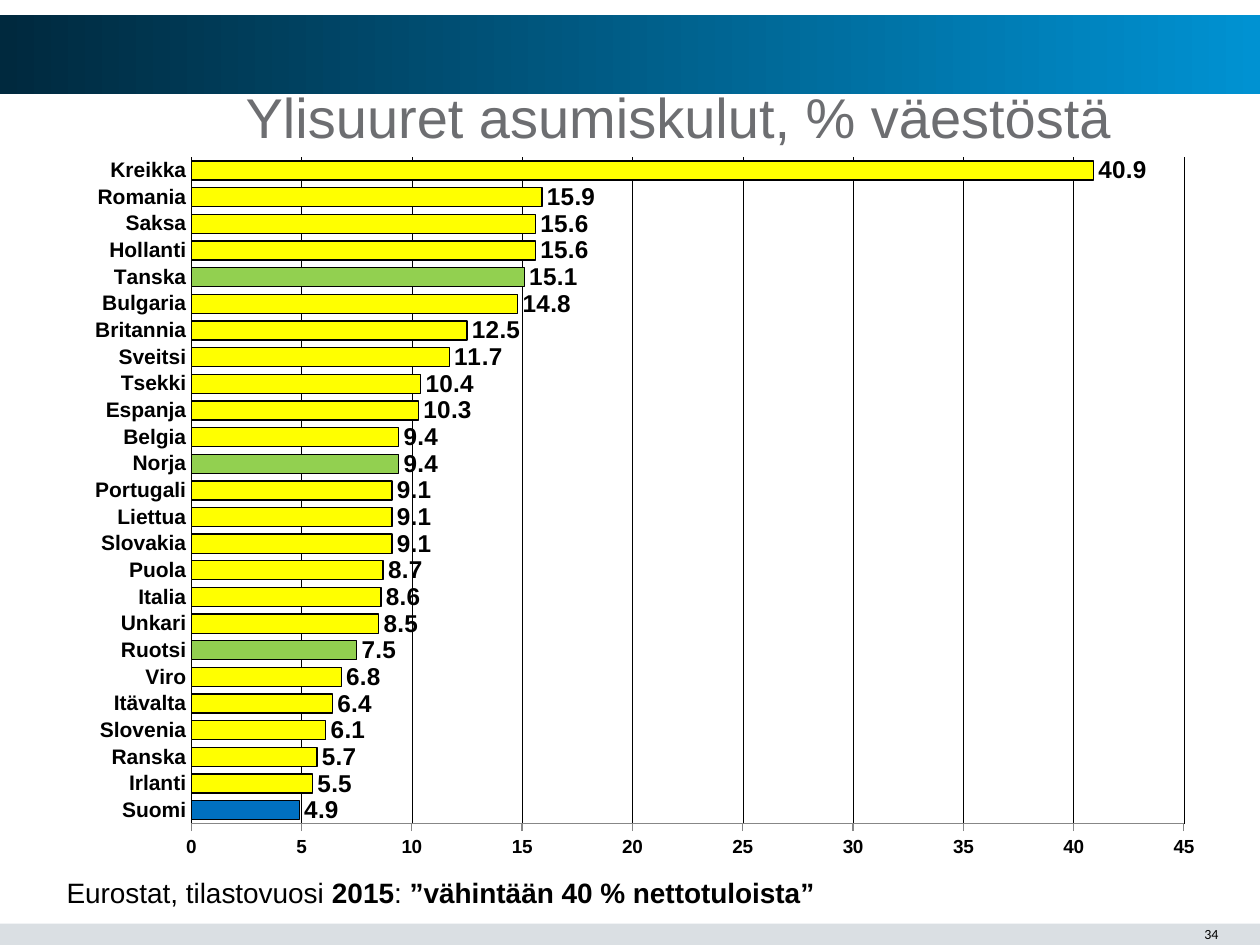
from dataclasses import dataclass

from lxml import etree
from pptx import Presentation
from pptx.chart.data import CategoryChartData
from pptx.dml.color import RGBColor
from pptx.enum.chart import XL_CHART_TYPE, XL_LABEL_POSITION, XL_TICK_MARK
from pptx.enum.shapes import MSO_SHAPE
from pptx.enum.text import MSO_ANCHOR, PP_ALIGN
from pptx.oxml import parse_xml
from pptx.oxml.ns import nsdecls, qn
from pptx.util import Inches, Pt

BAR, RECTANGLE = XL_CHART_TYPE.BAR_CLUSTERED, MSO_SHAPE.RECTANGLE
OUTSIDE_END = XL_LABEL_POSITION.OUTSIDE_END
NO_TICK, TICK_OUT = XL_TICK_MARK.NONE, XL_TICK_MARK.OUTSIDE
MIDDLE, BOTTOM, RIGHT = MSO_ANCHOR.MIDDLE, MSO_ANCHOR.BOTTOM, PP_ALIGN.RIGHT


@dataclass(frozen=True)
class Theme:
    font: str = "Arial"
    number_font: str = "Calibri"
    black: RGBColor = RGBColor(0x00, 0x00, 0x00)
    title: RGBColor = RGBColor(0x6D, 0x6E, 0x71)
    banner_dark: RGBColor = RGBColor(0x00, 0x29, 0x3E)
    banner_light: RGBColor = RGBColor(0x00, 0x92, 0xD2)
    footer: RGBColor = RGBColor(0xDA, 0xDF, 0xE3)
    axis: RGBColor = RGBColor(0x87, 0x87, 0x87)
    europe: RGBColor = RGBColor(0xFF, 0xFF, 0x00)
    nordic: RGBColor = RGBColor(0x92, 0xD0, 0x50)
    finland: RGBColor = RGBColor(0x00, 0x70, 0xC0)
    title_size: Pt = Pt(32)
    source_size: Pt = Pt(16)
    value_size: Pt = Pt(13.9)
    country_size: Pt = Pt(12)
    scale_size: Pt = Pt(10.8)
    number_size: Pt = Pt(8)


THEME = Theme()

COST_SHARES = {
    "Suomi": 4.9, "Irlanti": 5.5, "Ranska": 5.7, "Slovenia": 6.1,
    "Itävalta": 6.4, "Viro": 6.8, "Ruotsi": 7.5, "Unkari": 8.5,
    "Italia": 8.6, "Puola": 8.7, "Slovakia": 9.1, "Liettua": 9.1,
    "Portugali": 9.1, "Norja": 9.4, "Belgia": 9.4, "Espanja": 10.3,
    "Tsekki": 10.4, "Sveitsi": 11.7, "Britannia": 12.5, "Bulgaria": 14.8,
    "Tanska": 15.1, "Hollanti": 15.6, "Saksa": 15.6, "Romania": 15.9,
    "Kreikka": 40.9,
}
HIGHLIGHTS = {
    "Suomi": THEME.finland,
    "Ruotsi": THEME.nordic,
    "Norja": THEME.nordic,
    "Tanska": THEME.nordic,
}


def style_font(font, size, color=THEME.black, bold=False, name=THEME.font):
    font.name, font.size, font.bold = name, size, bold
    font.color.rgb = color


def style_line(line, color, width):
    line.color.rgb = color
    line.width = Pt(width)


prs = Presentation()
prs.slide_width, prs.slide_height = Inches(10), Inches(7.5)
slide = prs.slides.add_slide(prs.slide_layouts[5])
shapes = slide.shapes

# Banner and footer bands
banner = shapes.add_shape(RECTANGLE, 0, Inches(0.12), Inches(10), Inches(0.63))
banner.fill.gradient()
banner.fill.gradient_angle = 0
for stop, color in zip(banner.fill.gradient_stops, (THEME.banner_dark, THEME.banner_light)):
    stop.color.rgb = color
footer = shapes.add_shape(RECTANGLE, 0, Inches(7.33), Inches(10), Inches(0.17))
footer.fill.solid()
footer.fill.fore_color.rgb = THEME.footer
for band in (banner, footer):
    band.line.fill.background()
    band.shadow.inherit = False

# Slide number
number = shapes.add_textbox(Inches(9.02), Inches(7.17), Inches(0.75), Inches(0.36))
number.text_frame.word_wrap = True
number.text_frame.vertical_anchor = BOTTOM
number_line = number.text_frame.paragraphs[0]
number_line.text = "34"
number_line.alignment = RIGHT
style_font(number_line.font, THEME.number_size, name=THEME.number_font)

# Title
title = shapes.title
title.left, title.top = Inches(0.31), Inches(0.84)
title.width, title.height = Inches(9.53), Inches(0.31)
title.text_frame.vertical_anchor = MIDDLE
heading = title.text_frame.paragraphs[0]
heading.text = "Ylisuuret asumiskulut, % väestöstä"
heading.alignment = PP_ALIGN.LEFT
heading.line_spacing = Pt(28)
heading_properties = heading._p.get_or_add_pPr()
heading_properties.set("marL", str(Inches(1.54)))
heading_properties.set("indent", "0")
style_font(heading.font, THEME.title_size, THEME.title)

# Housing cost chart
data = CategoryChartData()
data.categories = list(COST_SHARES)
data.add_series("Series 1", list(COST_SHARES.values()))
chart = shapes.add_chart(
    BAR, Inches(0.43), Inches(1.15), Inches(9.14), Inches(5.75), data
).chart
chart.has_title = False
chart.has_legend = False
style_font(chart.font, THEME.scale_size, bold=True)

plot = chart.plots[0]
plot.gap_width = 40
plot.vary_by_categories = False
plot.has_data_labels = True
labels = plot.data_labels
labels.show_value = True
labels.position = OUTSIDE_END
style_font(labels.font, THEME.value_size, bold=True)

series = plot.series[0]
series.invert_if_negative = False
series.format.fill.solid()
series.format.fill.fore_color.rgb = THEME.europe
style_line(series.format.line, THEME.black, 0.73)
for index, country in enumerate(COST_SHARES):
    if country in HIGHLIGHTS:
        bar = series.points[index].format
        bar.fill.solid()
        bar.fill.fore_color.rgb = HIGHLIGHTS[country]
        style_line(bar.line, THEME.black, 0.73)

countries = chart.category_axis
countries.major_tick_mark = countries.minor_tick_mark = NO_TICK
style_font(countries.tick_labels.font, THEME.country_size, bold=True)
style_line(countries.format.line, THEME.black, 0.18)

scale = chart.value_axis
scale.minimum_scale, scale.maximum_scale, scale.major_unit = 0, 45, 5
scale.major_tick_mark, scale.minor_tick_mark = TICK_OUT, NO_TICK
scale.has_major_gridlines = True
style_font(scale.tick_labels.font, THEME.scale_size, bold=True)
style_line(scale.format.line, THEME.axis, 0.75)
style_line(scale.major_gridlines.format.line, THEME.black, 0.18)

plot_area = chart._chartSpace.chart.plotArea
for automatic_layout in plot_area.findall(qn("c:layout")):
    plot_area.remove(automatic_layout)
layout = parse_xml(f"<c:layout {nsdecls('c')}><c:manualLayout/></c:layout>")
for tag, value in (
    ("layoutTarget", "inner"), ("xMode", "edge"), ("yMode", "edge"),
    ("x", 0.119), ("y", 0.017), ("w", 0.862), ("h", 0.92),
):
    etree.SubElement(layout[0], qn(f"c:{tag}")).set("val", str(value))
plot_area.insert(0, layout)

# Source line
source = shapes.add_textbox(Inches(0.43), Inches(6.9), Inches(7.24), Inches(0.37))
source.text_frame.word_wrap = True
source_line = source.text_frame.paragraphs[0]
style_font(source_line.font, THEME.source_size)
for wording, bold in (
    ("Eurostat, tilastovuosi ", False),
    ("2015", True),
    (": ", False),
    ("”vähintään 40 % nettotuloista”", True),
):
    run = source_line.add_run()
    run.text = wording
    run.font.bold = bold

prs.save("out.pptx")
